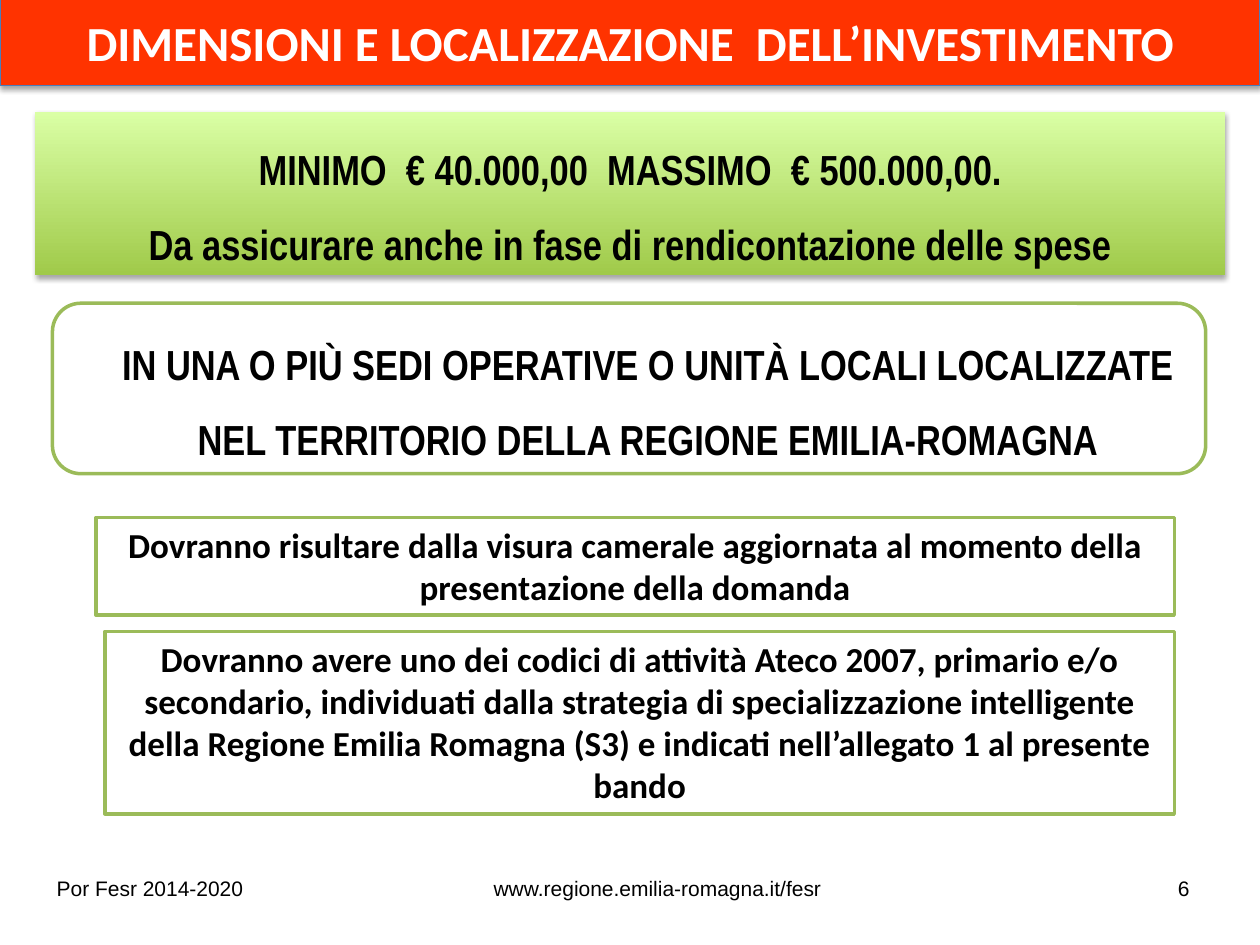
"""Build the slide on the size and location of the investment."""
import dataclasses
import typing

import lxml.etree
import pptx
import pptx.dml.color
import pptx.enum.shapes
import pptx.enum.text
import pptx.oxml.ns
import pptx.util

Pt = pptx.util.Pt
SHAPES = pptx.enum.shapes.MSO_SHAPE
ALIGN = pptx.enum.text.PP_ALIGN
ANCHOR = pptx.enum.text.MSO_ANCHOR

COLORS = {
    "banner": "FF3300",
    "banner_edge": "4B7EBC",
    "green_dark": "A0CA4A",
    "green_light": "DAFFA5",
    "green_edge": "9BBB59",
    "white": "FFFFFF",
    "black": "000000",
}


@dataclasses.dataclass
class TextStyle:
    font: str
    size: float
    color: str = "black"
    bold: bool = True
    align: typing.Any = ALIGN.CENTER
    spacing: float = 1.0
    indent: float = 0


@dataclasses.dataclass
class Panel:
    left: float
    top: float
    width: float
    height: float
    lines: list[str]
    style: TextStyle
    kind: typing.Any = SHAPES.RECTANGLE
    fill: str = "white"
    edge: str | None = "green_edge"
    edge_width: float = 2
    anchor: typing.Any = ANCHOR.MIDDLE
    shadow: bool = False


@dataclasses.dataclass
class Footer:
    left: float
    width: float
    text: str


HEADING = TextStyle("Calibri", 28, "white")
NARROW = TextStyle("Arial Narrow", 24, spacing=1.5)
NARROW_INDENTED = dataclasses.replace(NARROW, indent=21.6)
NOTE = TextStyle("Calibri", 20)
SMALL = TextStyle("Arial", 12, bold=False, align=ALIGN.LEFT)

TITLE = Panel(0, -0.7, 720, 49.7, ["DIMENSIONI E LOCALIZZAZIONE  DELL’INVESTIMENTO"], HEADING,
              fill="banner", edge="banner_edge", edge_width=0.75, shadow=True)
PANELS = [
    Panel(20, 64, 680, 93,
          ["MINIMO  € 40.000,00  MASSIMO  € 500.000,00.",
           "Da assicurare anche in fase di rendicontazione delle spese"],
          NARROW, fill="gradient", edge=None, shadow=True),
    Panel(30, 173.3, 659, 97.4,
          ["IN UNA O PIÙ SEDI OPERATIVE O UNITÀ LOCALI LOCALIZZATE "
           "NEL TERRITORIO DELLA REGIONE EMILIA-ROMAGNA"],
          NARROW_INDENTED, kind=SHAPES.FLOWCHART_ALTERNATE_PROCESS),
    Panel(54.8, 295.8, 616.3, 55.7,
          ["Dovranno risultare dalla visura camerale aggiornata al momento della "
           "presentazione della domanda"],
          NOTE, anchor=ANCHOR.TOP),
    Panel(60, 360.8, 611.1, 104.3,
          ["Dovranno avere uno dei codici di attività Ateco 2007, primario e/o secondario, "
           "individuati dalla strategia di specializzazione intelligente della Regione "
           "Emilia Romagna (S3) e indicati nell’allegato 1 al presente bando"],
          NOTE, anchor=ANCHOR.TOP),
]
FOOTERS = [
    Footer(25.3, 122, "Por Fesr 2014-2020"),
    Footer(275, 204, "www.regione.emilia-romagna.it/fesr"),
    Footer(666, 32, "6"),
]


def rgb(name: str) -> pptx.dml.color.RGBColor:
    """Return the named colour."""
    return pptx.dml.color.RGBColor.from_string(COLORS[name])


def write_text(frame: typing.Any, lines: list[str], style: TextStyle) -> None:
    """Write one paragraph for each line of text."""
    for index, line in enumerate(lines):
        para = frame.add_paragraph() if index else frame.paragraphs[0]
        para.alignment = style.align
        para.line_spacing = style.spacing
        if style.indent:
            properties = para._p.get_or_add_pPr()
            properties.set("marL", str(Pt(style.indent)))
            properties.set("indent", "0")
        span = para.add_run()
        span.text = line
        span.font.name = style.font
        span.font.size = Pt(style.size)
        span.font.bold = style.bold
        span.font.color.rgb = rgb(style.color)


def add_drop_shadow(box: typing.Any) -> None:
    """Put a soft shadow below the shape."""
    qn = pptx.oxml.ns.qn
    effects = box._element.spPr.find(qn("a:effectLst"))
    shadow = lxml.etree.SubElement(
        effects, qn("a:outerShdw"), blurRad=str(Pt(3.1)), dist=str(Pt(1.8)),
        dir="5400000", rotWithShape="0")
    color = lxml.etree.SubElement(shadow, qn("a:srgbClr"), val=COLORS["black"])
    lxml.etree.SubElement(color, qn("a:alpha"), val="35000")


def format_panel(box: typing.Any, panel: Panel) -> None:
    """Apply the fill, edge, shadow and text of a panel to a shape."""
    if panel.fill == "gradient":
        box.fill.gradient()
        box.fill.gradient_angle = 90
        for stop, position, name in zip(box.fill.gradient_stops, (0, 1),
                                        ("green_dark", "green_light")):
            stop.position = position
            stop.color.rgb = rgb(name)
    else:
        box.fill.solid()
        box.fill.fore_color.rgb = rgb(panel.fill)
    if panel.edge:
        box.line.color.rgb = rgb(panel.edge)
        box.line.width = Pt(panel.edge_width)
    else:
        box.line.fill.background()
    box.shadow.inherit = False
    if panel.shadow:
        add_drop_shadow(box)
    frame = box.text_frame
    frame.word_wrap = True
    frame.auto_size = pptx.enum.text.MSO_AUTO_SIZE.NONE
    frame.vertical_anchor = panel.anchor
    write_text(frame, panel.lines, panel.style)


def add_title(page: typing.Any, panel: Panel) -> None:
    """Move the title placeholder into the banner and format it."""
    box = page.shapes.title
    box.left, box.top = Pt(panel.left), Pt(panel.top)
    box.width, box.height = Pt(panel.width), Pt(panel.height)
    format_panel(box, panel)


def add_panel(page: typing.Any, panel: Panel) -> None:
    """Add a panel to the page."""
    box = page.shapes.add_shape(panel.kind, Pt(panel.left), Pt(panel.top),
                                Pt(panel.width), Pt(panel.height))
    format_panel(box, panel)


def add_footer(page: typing.Any, footer: Footer) -> None:
    """Add one footer text to the page."""
    box = page.shapes.add_textbox(Pt(footer.left), Pt(496.8), Pt(footer.width), Pt(21.6))
    box.text_frame.word_wrap = False
    write_text(box.text_frame, [footer.text], SMALL)


def main() -> None:
    """Build and save the deck."""
    deck = pptx.Presentation()
    deck.slide_width, deck.slide_height = Pt(720), Pt(540)
    page = deck.slides.add_slide(deck.slide_layouts[5])
    for footer in FOOTERS:
        add_footer(page, footer)
    add_title(page, TITLE)
    for panel in PANELS:
        add_panel(page, panel)
    deck.save("out.pptx")


if __name__ == "__main__":
    main()
